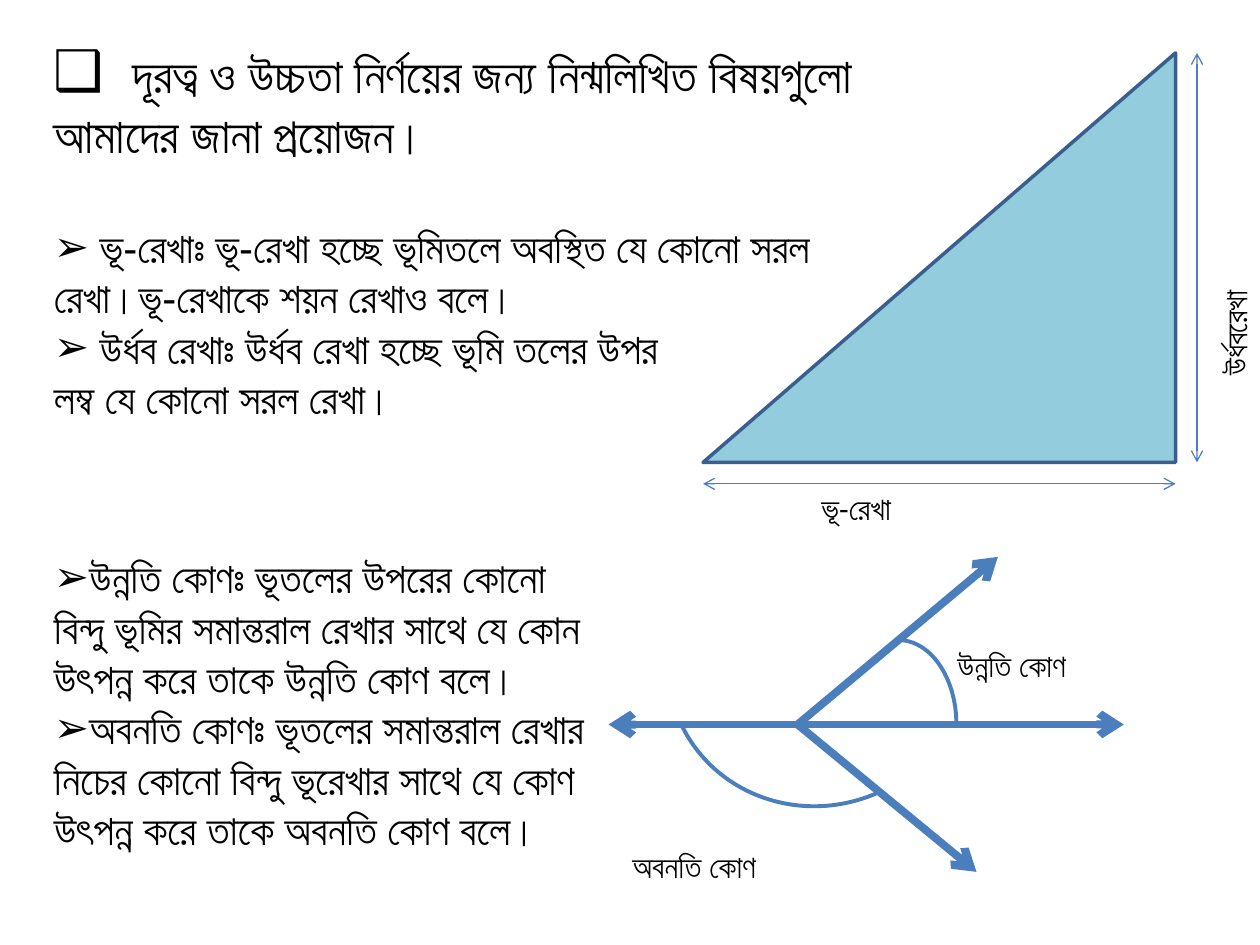
from lxml.etree import SubElement
from pptx import Presentation
from pptx.dml.color import RGBColor
from pptx.enum.shapes import MSO_CONNECTOR, MSO_SHAPE
from pptx.enum.text import MSO_AUTO_SIZE
from pptx.oxml.ns import qn
from pptx.util import Inches, Pt

BLACK = RGBColor(0x00, 0x00, 0x00)
AQUA = RGBColor(0x93, 0xCD, 0xDD)
NAVY = RGBColor(0x3A, 0x5F, 0x8C)
BLUE = RGBColor(0x4B, 0x7E, 0xBC)


def add_run(paragraph, text, size, font):
    """Append a black run to a paragraph and return it."""
    run = paragraph.add_run()
    run.text = text
    for name, value in {"name": font, "size": Pt(size)}.items():
        setattr(run.font, name, value)
    run.font.color.rgb = BLACK
    return run


def add_bullet(paragraph, mark):
    """Give a paragraph an inline bullet, or none when the mark is empty."""
    properties = paragraph._p.get_or_add_pPr()
    properties.set("marL", "0")
    properties.set("indent", "0")
    if mark:
        SubElement(properties, qn("a:buFont")).set("typeface", "Arial")
        SubElement(properties, qn("a:buChar")).set("char", mark)


def add_text_frame(slide, left, top, width, height, rotation=0):
    """Add a wrapping text box that grows with its text."""
    box = slide.shapes.add_textbox(Inches(left), Inches(top), Inches(width), Inches(height))
    box.rotation = rotation
    box.text_frame.word_wrap = True
    box.text_frame.auto_size = MSO_AUTO_SIZE.SHAPE_TO_FIT_TEXT
    return box.text_frame


def add_label(slide, text, left, top, width, rotation=0):
    """Add a one-line diagram label."""
    frame = add_text_frame(slide, left, top, width, 0.4, rotation)
    add_run(frame.paragraphs[0], text, 18, "Calibri")


def add_definitions(frame, definitions, started=False):
    """Write definition paragraphs, each with its bullet mark."""
    for mark, text in definitions:
        paragraph = frame.add_paragraph() if started else frame.paragraphs[0]
        started = True
        add_bullet(paragraph, mark)
        add_run(paragraph, text, 24, "Arial")


def add_line_notes(slide, left, top, width, height):
    """Write the heading and the definitions of the two lines."""
    frame = add_text_frame(slide, left, top, width, height)
    heading = frame.paragraphs[0]
    add_bullet(heading, "❑")
    gap = add_run(heading, " ", 32, "Arial")
    gap._r.get_or_add_rPr().set("spc", "830")
    add_run(heading, "দূরত্ব ও উচ্চতা নির্ণয়ের জন্য নিন্মলিখিত বিষয়গুলো আমাদের জানা প্রয়োজন।", 28, "Arial")
    add_definitions(frame, [
        ("➢", " ভূ-রেখাঃ ভূ-রেখা হচ্ছে ভূমিতলে অবস্থিত যে কোনো সরল রেখা।ভূ-রেখাকে শয়ন রেখাও বলে।"),
        ("➢", " উর্ধব রেখাঃ উর্ধব রেখা হচ্ছে ভূমি তলের উপর"),
        ("", "লম্ব যে কোনো সরল রেখা।"),
    ], started=True)
    frame.paragraphs[1].space_before = Pt(33)


def add_angle_notes(slide, left, top, width, height):
    """Write the definitions of the two angles."""
    add_definitions(add_text_frame(slide, left, top, width, height), [
        ("➢", "উন্নতি কোণঃ ভূতলের উপরের কোনো বিন্দু ভূমির সমান্তরাল রেখার সাথে যে কোন উৎপন্ন করে তাকে উন্নতি কোণ বলে।"),
        ("➢", "অবনতি কোণঃ ভূতলের সমান্তরাল রেখার"),
        ("", "নিচের কোনো বিন্দু ভূরেখার সাথে যে কোণ উৎপন্ন করে তাকে অবনতি কোণ বলে।"),
    ])


def add_arrow(slide, start, end, weight, both_ends=False):
    """Draw a blue open arrow between two points."""
    arrow = slide.shapes.add_connector(
        MSO_CONNECTOR.STRAIGHT, *(Inches(value) for value in (*start, *end)))
    arrow.line.color.rgb = BLUE
    arrow.line.width = Pt(weight)
    outline = arrow.line._get_or_add_ln()
    for tip in ("a:headEnd", "a:tailEnd") if both_ends else ("a:tailEnd",):
        SubElement(outline, qn(tip)).set("type", "arrow")
    SubElement(arrow._element.spPr, qn("a:effectLst"))


def add_outlined(slide, kind, box, color, weight):
    """Add a preset shape with an outline and no shadow or fill."""
    shape = slide.shapes.add_shape(kind, *(Inches(value) for value in box))
    shape.shadow.inherit = False
    shape.fill.background()
    shape.line.color.rgb = color
    shape.line.width = Pt(weight)
    return shape


def add_triangle_diagram(slide, left, top, width, height):
    """Draw the right triangle with its ground and vertical lines."""
    right, bottom, gap = left + width, top + height, 0.17
    triangle = add_outlined(slide, MSO_SHAPE.RIGHT_TRIANGLE, (left, top, width, height), NAVY, 2)
    triangle.fill.solid()
    triangle.fill.fore_color.rgb = AQUA
    triangle._element.spPr.xfrm.set("flipH", "1")
    add_arrow(slide, (left, bottom + gap), (right, bottom + gap), 0.75, both_ends=True)
    add_arrow(slide, (right + gap, top), (right + gap, bottom), 0.75, both_ends=True)
    add_label(slide, "উর্ধবরেখা", right - 0.24, top + 1.75, 1.42, rotation=270)
    add_label(slide, "ভূ-রেখা", left + 0.84, bottom + 0.16, 1.25)


def add_angle_diagram(slide, left, top, width, height):
    """Draw the angles of elevation and depression around a vertex."""
    level = top + 1.33
    vertex = (left + 1.5, level)
    add_arrow(slide, (left, level), (left + width, level), 4.5, both_ends=True)
    add_arrow(slide, vertex, (left + 3.09, top), 4.5)
    add_arrow(slide, vertex, (left + 2.92, top + height), 4.5)
    add_outlined(slide, MSO_SHAPE.ARC, (left + 1.84, top + 0.66, 0.92, 1.33), BLUE, 2.25)
    depression = add_outlined(
        slide, MSO_SHAPE.ARC, (left + 0.46, top - 0.35, 2.42, 2.32), BLUE, 2.25)
    depression.rotation = 155.2
    depression.adjustments[0] = 163.08
    add_label(slide, "উন্নতি কোণ", left + 2.67, top + 0.66, 2.5)
    add_label(slide, "অবনতি কোণ", left + 0.09, top + 2.25, 2.17)


def main():
    """Build and save the slide."""
    deck = Presentation()
    deck.slide_width, deck.slide_height = Inches(10), Inches(7.5)
    slide = deck.slides.add_slide(deck.slide_layouts.get_by_name("Blank"))
    add_triangle_diagram(slide, 5.58, 0.42, 3.75, 3.25)
    add_line_notes(slide, 0.33, 0.25, 6.58, 3.5)
    add_angle_diagram(slide, 4.83, 4.42, 4.09, 2.5)
    add_angle_notes(slide, 0.33, 4.33, 4.5, 2.93)
    deck.save("out.pptx")


if __name__ == "__main__":
    main()
